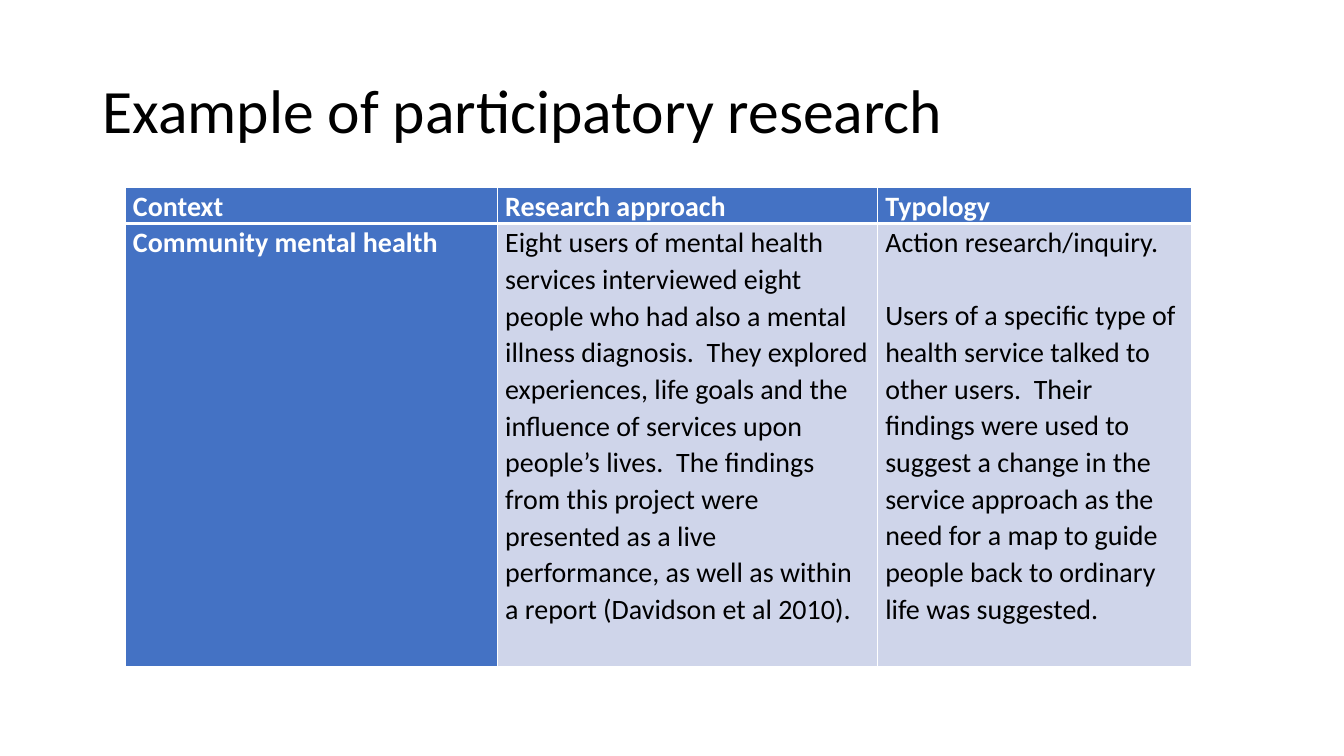
from lxml import etree
from pptx import Presentation
from pptx import util as u
from pptx.dml.color import RGBColor
from pptx.enum import text
from pptx.oxml.ns import qn

BLUE, PALE, WHITE, BLACK = "4472C4", "CFD5EA", "FFFFFF", "000000"


def rgb(value):
    return RGBColor.from_string(value)


def add_border(cell, side, points):
    ln = etree.SubElement(cell._tc.get_or_add_tcPr(), qn("a:ln" + side), w=str(u.Pt(points)))
    fill = etree.SubElement(ln, qn("a:solidFill"))
    etree.SubElement(fill, qn("a:srgbClr"), val=WHITE)


prs = Presentation()
prs.slide_width, prs.slide_height = u.Cm(33.87), u.Cm(19.05)
s = prs.slides.add_slide(prs.slide_layouts[5])

# Title
title = s.shapes.title
title.left, title.top, title.width, title.height = u.Cm(2.33), u.Cm(1.01), u.Cm(29.21), u.Cm(3.68)
tf = title.text_frame
tf.text = "Example of participatory research"
tf.vertical_anchor = text.MSO_ANCHOR.MIDDLE
p = tf.paragraphs[0]
p.alignment, p.line_spacing = text.PP_ALIGN.LEFT, 0.9
for name, value in {"name": "Calibri", "size": u.Pt(44)}.items():
    setattr(p.runs[0].font, name, value)
p.runs[0].font.color.rgb = rgb(BLACK)

# Table text: rows of cells, each cell a list of paragraphs
rows = [
    [["Context"], ["Research approach"], ["Typology"]],
    [
        ["Community mental health"],
        ["Eight users of mental health services interviewed eight people who had also "
         "a mental illness diagnosis.  They explored experiences, life goals and the "
         "influence of services upon people’s lives.  The findings from this project "
         "were presented as a live performance, as well as within a report "
         "(Davidson et al 2010)."],
        ["Action research/inquiry.",
         "Users of a specific type of health service talked to other users.  Their "
         "findings were used to suggest a change in the service approach as the need "
         "for a map to guide people back to ordinary life was suggested."],
    ],
]
widths, heights = [9.38, 9.58, 7.9], [0.92, 11.15]
table = s.shapes.add_table(2, 3, u.Cm(3.16), u.Cm(4.71), u.Cm(sum(widths)), u.Cm(sum(heights))).table
for column, width in zip(table.columns, widths):
    column.width = u.Cm(width)
for row, height in zip(table.rows, heights):
    row.height = u.Cm(height)

# Cells: the header row and first column are blue with bold white text
margins = {"margin_left": u.Cm(0.19), "margin_right": u.Cm(0.19), "margin_top": 0, "margin_bottom": 0}
for i, row in enumerate(rows):
    for j, paragraphs in enumerate(row):
        cell = table.cell(i, j)
        heading = i == 0 or j == 0
        for side in "LRTB":
            header_rule = (i, side) in [(0, "B"), (1, "T")]
            add_border(cell, side, 3 if header_rule else 1)
        cell.fill.solid()
        cell.fill.fore_color.rgb = rgb(BLUE if heading else PALE)
        for name, value in margins.items():
            setattr(cell, name, value)
        tf = cell.text_frame
        for k, words in enumerate(paragraphs):
            p = tf.add_paragraph() if k else tf.paragraphs[0]
            p.line_spacing = 1.07
            p.space_before = u.Pt(26 if k else 0)
            r = p.add_run()
            r.text = words
            for name, value in {"name": "Calibri", "size": u.Pt(20), "bold": heading}.items():
                setattr(r.font, name, value)
            r.font.color.rgb = rgb(WHITE if heading else BLACK)

prs.save("out.pptx")
